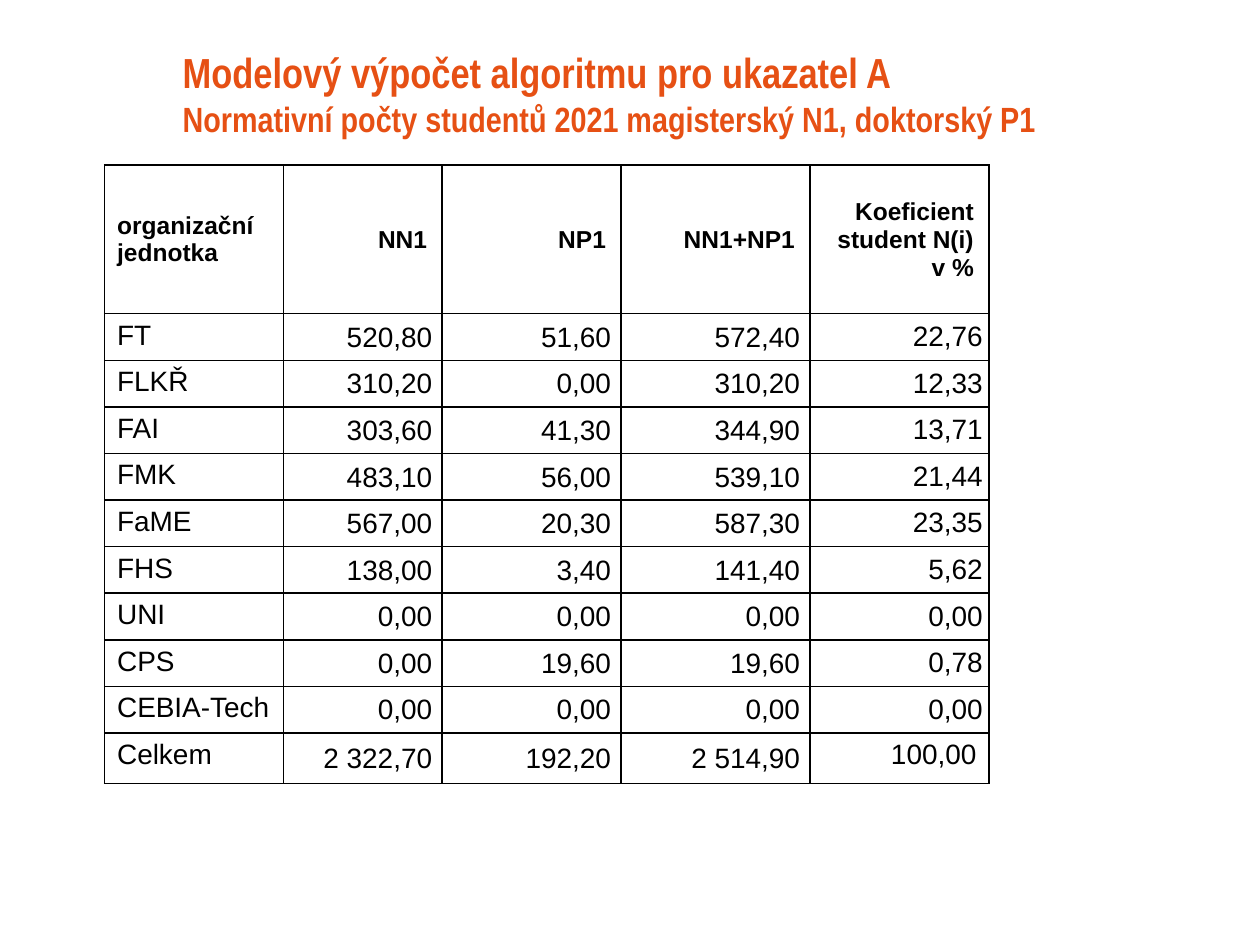
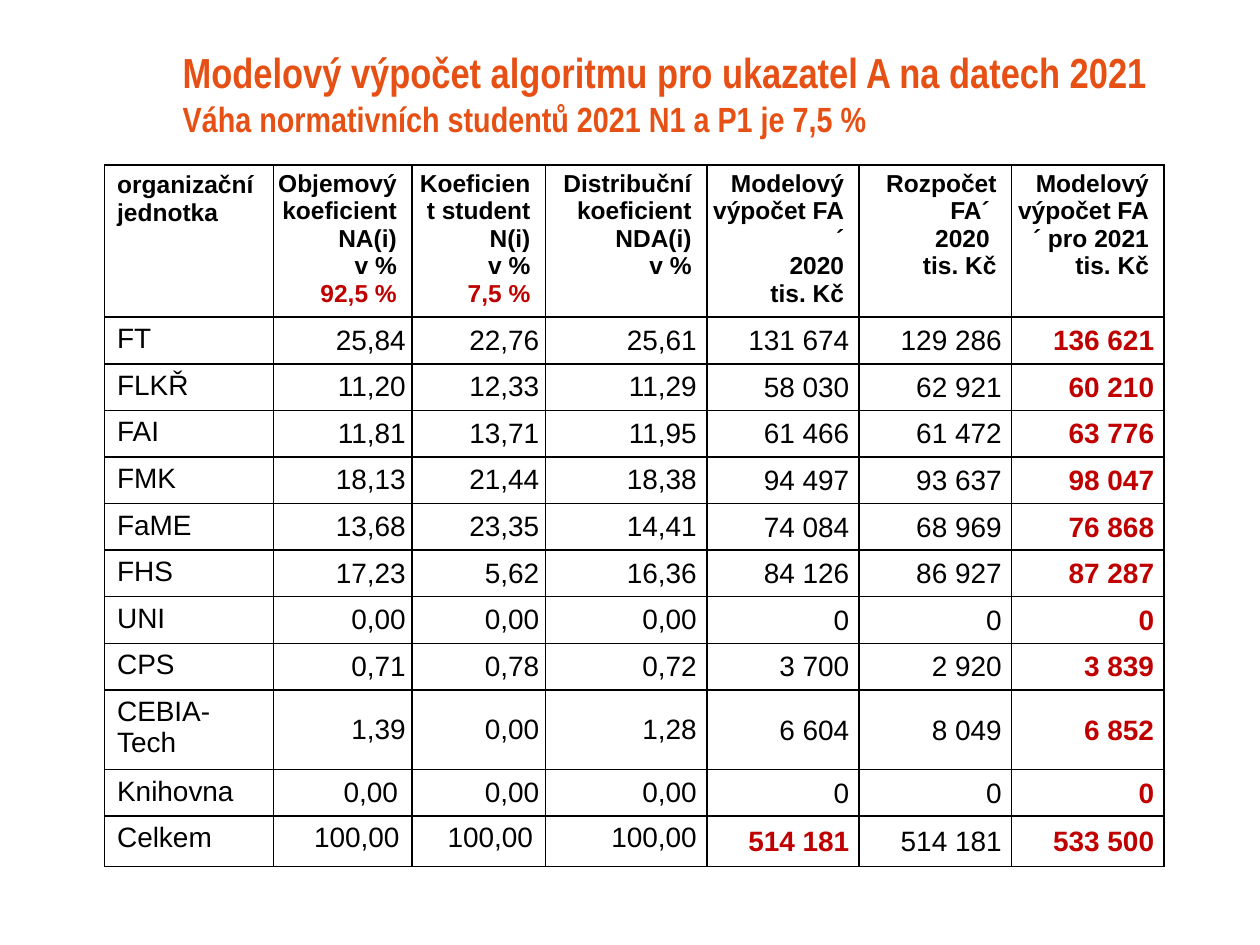
"""Build two slides with model calculation tables for indicator A."""
import lxml.etree
import pptx
import pptx.dml.color
import pptx.enum.text
import pptx.oxml.ns
import pptx.util

Inches = pptx.util.Inches
Pt = pptx.util.Pt
ALIGN = pptx.enum.text.PP_ALIGN
ANCHOR = pptx.enum.text.MSO_ANCHOR

ORANGE = pptx.dml.color.RGBColor(0xE6, 0x50, 0x14)
BLACK = pptx.dml.color.RGBColor(0, 0, 0)
RED = pptx.dml.color.RGBColor(0xC0, 0, 0)

RED_MARK = "*"
HEAD_HIGH, ROW_HIGH, LAST_HIGH = 1.18, 0.37, 0.4
WIDE = (0.1, 0.05, 0.1, 0.05)
PADS = {
    "name": WIDE,
    "share": (0.05, 0, 0.05, 0),
    "ratio": (0.05, 0, 0.08, 0),
    "count": (0.01, 0.01, 0.08, 0),
}

COUNT_KINDS = ["name", "count", "count", "count", "share"]
COUNT_WIDTHS = [1.42, 1.26, 1.42, 1.5, 1.42]
COUNT_HEADS = ["organizační jednotka", "NN1", "NP1", "NN1+NP1",
               "Koeficient student N(i)\nv %"]
COUNT_ROWS = """FT|520,80|51,60|572,40|22,76
FLKŘ|310,20|0,00|310,20|12,33
FAI|303,60|41,30|344,90|13,71
FMK|483,10|56,00|539,10|21,44
FaME|567,00|20,30|587,30|23,35
FHS|138,00|3,40|141,40|5,62
UNI|0,00|0,00|0,00|0,00
CPS|0,00|19,60|19,60|0,78
CEBIA-Tech|0,00|0,00|0,00|0,00
Celkem|2 322,70|192,20|2 514,90|100,00"""

MODEL_KINDS = ["name", "share", "share", "ratio", "count", "count", "count"]
MODEL_WIDTHS = [1.34, 1.1, 1.06, 1.28, 1.21, 1.21, 1.21]
MODEL_HEADS = ["organizační jednotka",
               "Objemový koeficient NA(i)\nv %\n*92,5 %",
               "Koeficient student N(i)\nv %\n*7,5 %",
               "Distribuční koeficient NDA(i)\nv %",
               "Modelový výpočet FA´\n2020\ntis. Kč",
               "Rozpočet FA´ \n2020 \ntis. Kč",
               "Modelový výpočet FA´ pro 2021\ntis. Kč"]
MODEL_ROWS = """FT|25,84|22,76|25,61|131 674|129 286|*136 621
FLKŘ|11,20|12,33|11,29|58 030|62 921|*60 210
FAI|11,81|13,71|11,95|61 466|61 472|*63 776
FMK|18,13|21,44|18,38|94 497|93 637|*98 047
FaME|13,68|23,35|14,41|74 084|68 969|*76 868
FHS|17,23|5,62|16,36|84 126|86 927|*87 287
UNI|0,00|0,00|0,00|0|0|*0
CPS|0,71|0,78|0,72|3 700|2 920|*3 839
CEBIA-Tech|1,39|0,00|1,28|6 604|8 049|*6 852
Knihovna|0,00 |0,00|0,00|0|0|*0
Celkem|100,00|100,00|100,00|*514 181|514 181|*533 500"""


def write(para, text, size=16, font="Arial", color=BLACK, bold=False, align=ALIGN.LEFT):
    """Add one formatted run to a paragraph."""
    para.alignment = align
    run = para.add_run()
    run.text = text
    run.font.size = Pt(size)
    run.font.name = font
    run.font.bold = bold
    run.font.color.rgb = color


def add_title(slide, main, sub):
    """Add the two-line orange heading."""
    box = slide.shapes.add_textbox(Inches(1.15), Inches(0.36), Inches(8.63), Inches(0.76))
    frame = box.text_frame
    frame.word_wrap = True
    frame.vertical_anchor = ANCHOR.MIDDLE
    frame.margin_left = Inches(0.3)
    para = frame.paragraphs[0]
    style = dict(font="Arial Narrow", color=ORANGE, bold=True)
    write(para, main, size=24, **style)
    para.add_line_break()
    write(para, sub, size=20, **style)


def add_edges(cell):
    """Draw a thin black line on each side of a cell."""
    props = cell._tc.get_or_add_tcPr()
    name = pptx.oxml.ns.qn
    for side in ("lnL", "lnR", "lnT", "lnB"):
        line = lxml.etree.SubElement(props, name("a:" + side), w=str(Pt(1)))
        fill = lxml.etree.SubElement(line, name("a:solidFill"))
        lxml.etree.SubElement(fill, name("a:srgbClr"), val=str(BLACK))


def fill_cell(cell, text, pads, anchor, **style):
    """Set a cell's lines, margins and edges; marked lines turn red and bold."""
    add_edges(cell)
    cell.fill.background()
    cell.vertical_anchor = anchor
    (cell.margin_left, cell.margin_top,
     cell.margin_right, cell.margin_bottom) = map(Inches, pads)
    for i, line in enumerate(text.split("\n")):
        para = cell.text_frame.add_paragraph() if i else cell.text_frame.paragraphs[0]
        look = dict(style, color=RED, bold=True) if line.startswith(RED_MARK) else style
        write(para, line.removeprefix(RED_MARK), **look)


def add_grid(slide, heads, body, kinds, widths, head_pads, head_anchor):
    """Add a table with a bold heading row and a total row."""
    rows = [line.split("|") for line in body.split("\n")]
    highs = [HEAD_HIGH] + [ROW_HIGH] * (len(rows) - 1) + [LAST_HIGH]
    grid = slide.shapes.add_table(len(highs), len(widths), Inches(0.83), Inches(1.31),
                                  Inches(sum(widths)), Inches(sum(highs))).table
    grid.first_row = grid.horz_banding = False
    for col, width in zip(grid.columns, widths):
        col.width = Inches(width)
    for row, high in zip(grid.rows, highs):
        row.height = Inches(high)
    for c, kind in enumerate(kinds):
        align = ALIGN.LEFT if kind == "name" else ALIGN.RIGHT
        fill_cell(grid.cell(0, c), heads[c], WIDE if kind == "name" else head_pads,
                  head_anchor, size=14, bold=True, align=align)
        for r, row in enumerate(rows, 1):
            pads = PADS[kind]
            anchor = ANCHOR.TOP if kind == "name" else ANCHOR.MIDDLE
            if r == len(rows) and kind in ("share", "ratio"):
                pads = (0.1, 0.05, 0.1 if kind == "share" else 0.08, 0.05)
                anchor = ANCHOR.TOP
            fill_cell(grid.cell(r, c), row[c], pads, anchor, align=align)


def main():
    """Build and save the deck."""
    deck = pptx.Presentation()
    deck.slide_width, deck.slide_height = Inches(10), Inches(7.5)
    blank = deck.slide_layouts[6]

    slide = deck.slides.add_slide(blank)
    add_title(slide, "Modelový výpočet algoritmu pro ukazatel A",
              "Normativní počty studentů 2021 magisterský N1, doktorský P1")
    add_grid(slide, COUNT_HEADS, COUNT_ROWS, COUNT_KINDS, COUNT_WIDTHS,
             (0.01, 0.01, 0.12, 0), ANCHOR.MIDDLE)

    slide = deck.slides.add_slide(blank)
    add_title(slide, "Modelový výpočet algoritmu pro ukazatel A na datech 2021",
              "Váha normativních studentů 2021 N1 a P1 je 7,5 %")
    add_grid(slide, MODEL_HEADS, MODEL_ROWS, MODEL_KINDS, MODEL_WIDTHS,
             (0, 0.04, 0.12, 0), ANCHOR.TOP)

    deck.save("out.pptx")


if __name__ == "__main__":
    main()
